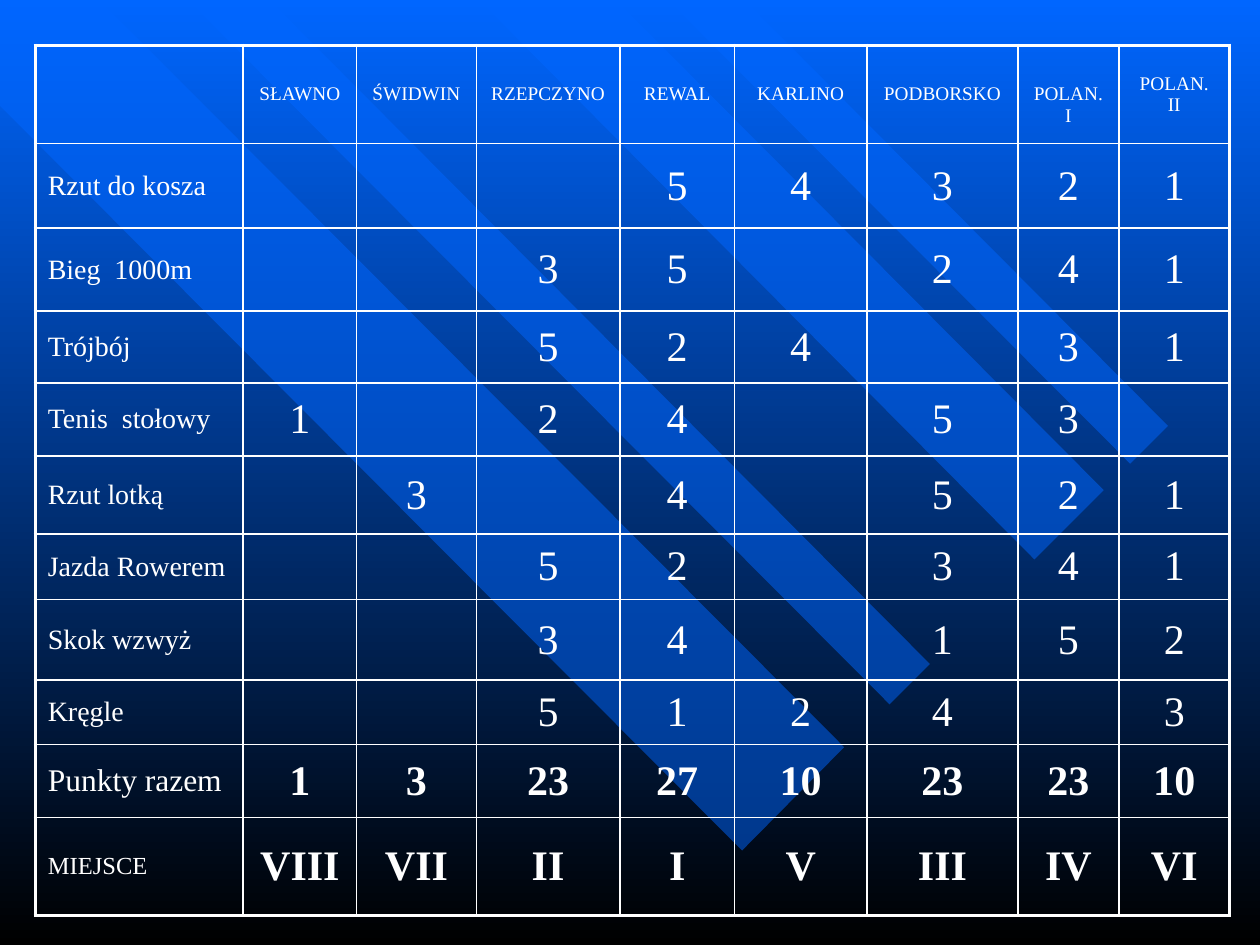
from lxml.etree import SubElement
from pptx import Presentation
from pptx.dml.color import RGBColor
from pptx.enum.text import MSO_ANCHOR as Anchor, PP_ALIGN as Align
from pptx.oxml.ns import qn
from pptx.util import Inches, Pt

WHITE, BLUE, BLACK = "FFFFFF", "0066FF", "000000"
FONT = "Times New Roman"
OUTER, INNER = 2.25, 1  # border widths in points

# Diagonal stripes: corner points in inches
STRIPES = [
    [(6.7, 5.93), (0.79, 0), (0, 0), (0, 0.84), (5.89, 6.75)],
    [(2.14, 0), (7.38, 5.27), (7.06, 5.59), (1.49, 0)],
    [(4.89, 0), (8.76, 3.89), (8.21, 4.44), (3.8, 0)],
    [(5.3, 0), (8.97, 3.68), (9.27, 3.38), (5.91, 0)],
]

TEAMS = ["", "SŁAWNO", "ŚWIDWIN", "RZEPCZYNO", "REWAL", "KARLINO",
         "PODBORSKO", " POLAN.I", "POLAN. II"]
EVENTS = [
    ["Rzut do kosza", "", "", "", "5", "4", "3", "2", "1"],
    ["Bieg  1000m", "", "", "3", "5", "", "2", "4", "1"],
    ["Trójbój", "", "", "5", "2", "4", "", "3", "1"],
    ["Tenis  stołowy", "1", "", "2", "4", "", "5", "3", ""],
    ["Rzut lotką", "", "3", "", "4", "", "5", "2", "1"],
    ["Jazda Rowerem", "", "", "5", "2", "", "3", "4", "1"],
    ["Skok wzwyż", "", "", "3", "4", "", "1", "5", "2"],
    ["Kręgle", "", "", "5", "1", "2", "4", "", "3"],
]
TOTALS = ["Punkty razem", "1", "3", "23", "27", "10", "23", "23", "10"]
PLACES = ["MIEJSCE", "VIII", "VII", "II", "I", "V", "III", "IV", "VI"]

# Each row: texts, label size, score size, bold scores
ROWS = ([(TEAMS, 11, 11, False)]
        + [(event, 16, 24, False) for event in EVENTS]
        + [(TOTALS, 18, 24, True), (PLACES, 14, 24, True)])
COL_WIDTHS = [1.65, 0.9, 0.95, 1.14, 0.91, 1.05, 1.2, 0.8, 0.88]
ROW_HEIGHTS = [0.78, 0.67, 0.66, 0.57, 0.58, 0.62, 0.52, 0.64, 0.51, 0.58, 0.78]


def color(value):
    return RGBColor.from_string(value)


def add_stripe(slide, corners):
    points = [(Inches(x), Inches(y)) for x, y in corners]
    builder = slide.shapes.build_freeform(*points[0], scale=1.0)
    builder.add_line_segments(points[1:], close=True)
    stripe = builder.convert_to_shape()
    stripe.shadow.inherit = False
    stripe.line.fill.background()
    stripe.fill.solid()
    stripe.fill.fore_color.rgb = color(BLUE)
    rgb = stripe._element.spPr.find(".//" + qn("a:srgbClr"))
    SubElement(rgb, qn("a:alpha"), val="50000")


def set_borders(cell, widths):
    props = cell._tc.get_or_add_tcPr()
    for index, (side, width) in enumerate(widths.items()):
        line = props.makeelement(qn(f"a:ln{side}"), {"w": str(Pt(width))})
        fill = SubElement(line, qn("a:solidFill"))
        SubElement(fill, qn("a:srgbClr"), val=WHITE)
        props.insert(index, line)


def write(cell, text, size, bold, align):
    cell.vertical_anchor = Anchor.MIDDLE
    paragraph = cell.text_frame.paragraphs[0]
    paragraph.alignment = align
    before = SubElement(paragraph._p.get_or_add_pPr(), qn("a:spcBef"))
    SubElement(before, qn("a:spcPct"), val="20000")
    run = paragraph.add_run()
    run.text = text
    run.font.name = FONT
    run.font.size = Pt(size)
    run.font.bold = bold
    run.font.color.rgb = color(WHITE)


def add_results(slide):
    last_row, last_col = len(ROWS) - 1, len(TEAMS) - 1
    frame = slide.shapes.add_table(
        len(ROWS), len(TEAMS), Inches(0.28), Inches(0.36),
        Inches(sum(COL_WIDTHS)), Inches(sum(ROW_HEIGHTS)))
    results = frame.table
    results.first_row = results.horz_banding = False
    for column, width in zip(results.columns, COL_WIDTHS):
        column.width = Inches(width)
    for row, height in zip(results.rows, ROW_HEIGHTS):
        row.height = Inches(height)

    for r, (texts, label_size, score_size, bold) in enumerate(ROWS):
        for c, text in enumerate(texts):
            cell = results.cell(r, c)
            cell.fill.background()
            set_borders(cell, {
                "L": OUTER if c == 0 else INNER,
                "R": OUTER if c == last_col else INNER,
                "T": OUTER if r == 0 else INNER,
                "B": OUTER if r == last_row else INNER,
            })
            if text and c == 0:
                write(cell, text, label_size, False, Align.LEFT)
            elif text:
                write(cell, text, score_size, bold, Align.CENTER)


def main():
    deck = Presentation()
    deck.slide_width, deck.slide_height = Inches(10), Inches(7.5)
    slide = deck.slides.add_slide(deck.slide_layouts[6])

    # Background: blue at the top, black at the bottom
    backdrop = slide.background.fill
    backdrop.gradient()
    backdrop.gradient_angle = 270
    for stop, shade in zip(backdrop.gradient_stops, (BLUE, BLACK)):
        stop.color.rgb = color(shade)

    for corners in STRIPES:
        add_stripe(slide, corners)
    add_results(slide)
    deck.save("out.pptx")


if __name__ == "__main__":
    main()
